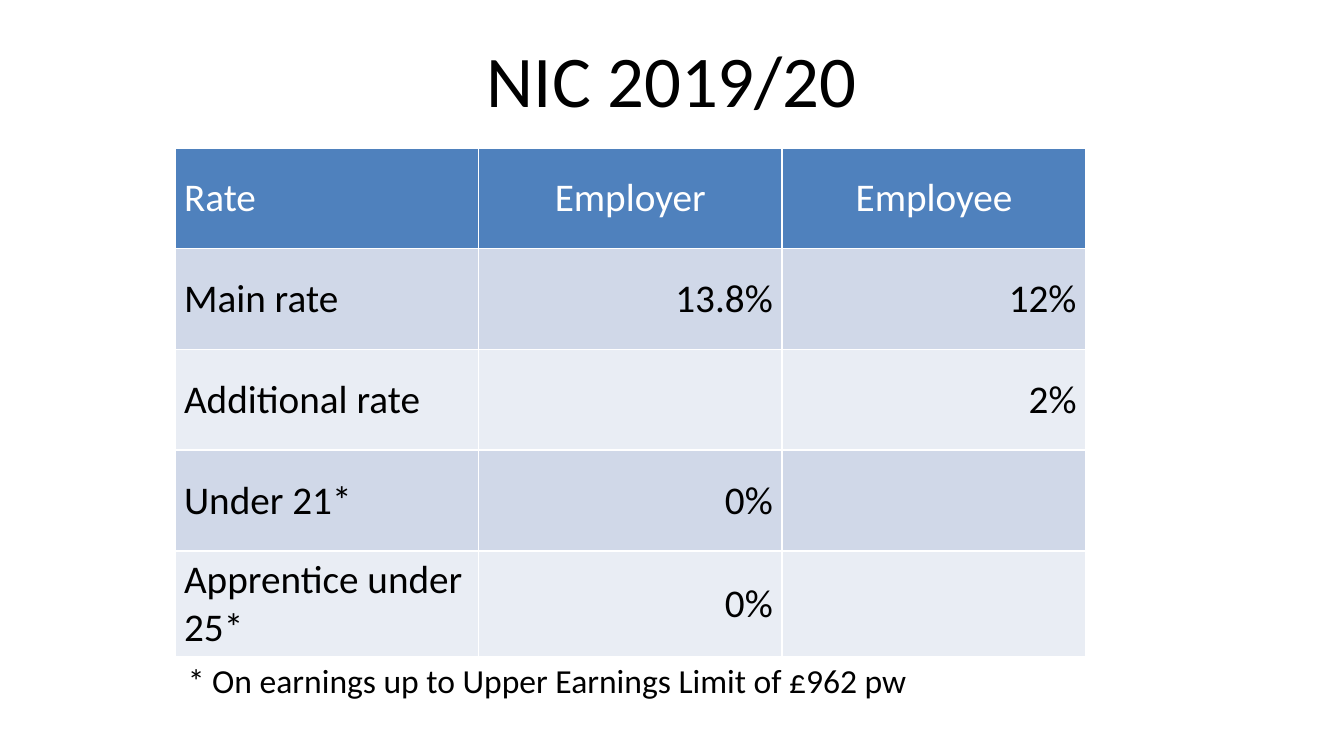
"""Build a slide with a table of National Insurance rates for 2019/20."""
import lxml.etree
import pptx
import pptx.dml.color
import pptx.enum.text
import pptx.oxml.ns
import pptx.util

COLOURS = {"header": "4F81BD", "band": "D0D8E8", "pale": "E9EDF4",
           "white": "FFFFFF", "black": "000000"}
ALIGN = pptx.enum.text.PP_ALIGN
ANCHOR = pptx.enum.text.MSO_ANCHOR
RATES = [
    ("Rate", "Employer", "Employee"),
    ("Main rate", "13.8%", "12%"),
    ("Additional rate", "", "2%"),
    ("Under 21*", "0%", ""),
    ("Apprentice under 25*", "0%", ""),
]


def write(paragraph, text, size, colour, align):
    paragraph.text = text
    paragraph.alignment = align
    paragraph.font.name = "Calibri"
    paragraph.font.size = pptx.util.Pt(size)
    paragraph.font.color.rgb = pptx.dml.color.RGBColor.from_string(COLOURS[colour])


def draw_borders(cell, points):
    properties = cell._tc.get_or_add_tcPr()
    for position, side in enumerate("LRTB"):
        line = lxml.etree.Element(pptx.oxml.ns.qn(f"a:ln{side}"), w=str(pptx.util.Pt(points)))
        fill = lxml.etree.SubElement(line, pptx.oxml.ns.qn("a:solidFill"))
        lxml.etree.SubElement(fill, pptx.oxml.ns.qn("a:srgbClr"), val=COLOURS["white"])
        properties.insert(position, line)


deck = pptx.Presentation()
deck.slide_width = pptx.util.Inches(10)
deck.slide_height = deck.slide_width * 9 // 16
slide = deck.slides.add_slide(deck.slide_layouts[6])

margin = pptx.util.Inches(1.3)
column_width = pptx.util.Inches(2.26)
row_height = pptx.util.Inches(0.75)
last_row_height = pptx.util.Inches(0.79)

title = slide.shapes.add_textbox(int(deck.slide_width * 0.05), pptx.util.Inches(0.23),
                                 int(deck.slide_width * 0.9), pptx.util.Inches(0.94))
title.text_frame.word_wrap = True
title.text_frame.vertical_anchor = ANCHOR.TOP
title.text_frame.margin_top = pptx.util.Inches(0.03)
write(title.text_frame.paragraphs[0], "NIC 2019/20", 39, "black", ALIGN.CENTER)

rates = slide.shapes.add_table(len(RATES), len(RATES[0]), margin, pptx.util.Inches(1.1),
                               column_width * 3, row_height * 4 + last_row_height).table
rates.first_row = False
rates.horz_banding = False
for column in rates.columns:
    column.width = column_width
for row in rates.rows:
    row.height = row_height
rates.rows[len(RATES) - 1].height = last_row_height

for row_index, entries in enumerate(RATES):
    is_header = row_index == 0
    background = "header" if is_header else "band" if row_index % 2 else "pale"
    for column_index, entry in enumerate(entries):
        cell = rates.cell(row_index, column_index)
        cell.fill.solid()
        cell.fill.fore_color.rgb = pptx.dml.color.RGBColor.from_string(COLOURS[background])
        cell.vertical_anchor = ANCHOR.MIDDLE
        cell.margin_left = cell.margin_right = pptx.util.Inches(0.07)
        cell.margin_top = cell.margin_bottom = pptx.util.Inches(0.04)
        figure_align = ALIGN.CENTER if is_header else ALIGN.RIGHT
        write(cell.text_frame.paragraphs[0], entry, 21, "white" if is_header else "black",
              figure_align if column_index else ALIGN.LEFT)
        draw_borders(cell, 1)

footnote = slide.shapes.add_textbox(margin, pptx.util.Inches(4.86),
                                    pptx.util.Inches(6.08), pptx.util.Inches(0.4))
footnote.text_frame.word_wrap = True
footnote.text_frame.auto_size = pptx.enum.text.MSO_AUTO_SIZE.SHAPE_TO_FIT_TEXT
write(footnote.text_frame.paragraphs[0],
      "* On earnings up to Upper Earnings Limit of £962 pw", 18, "black", ALIGN.LEFT)

deck.save("out.pptx")
